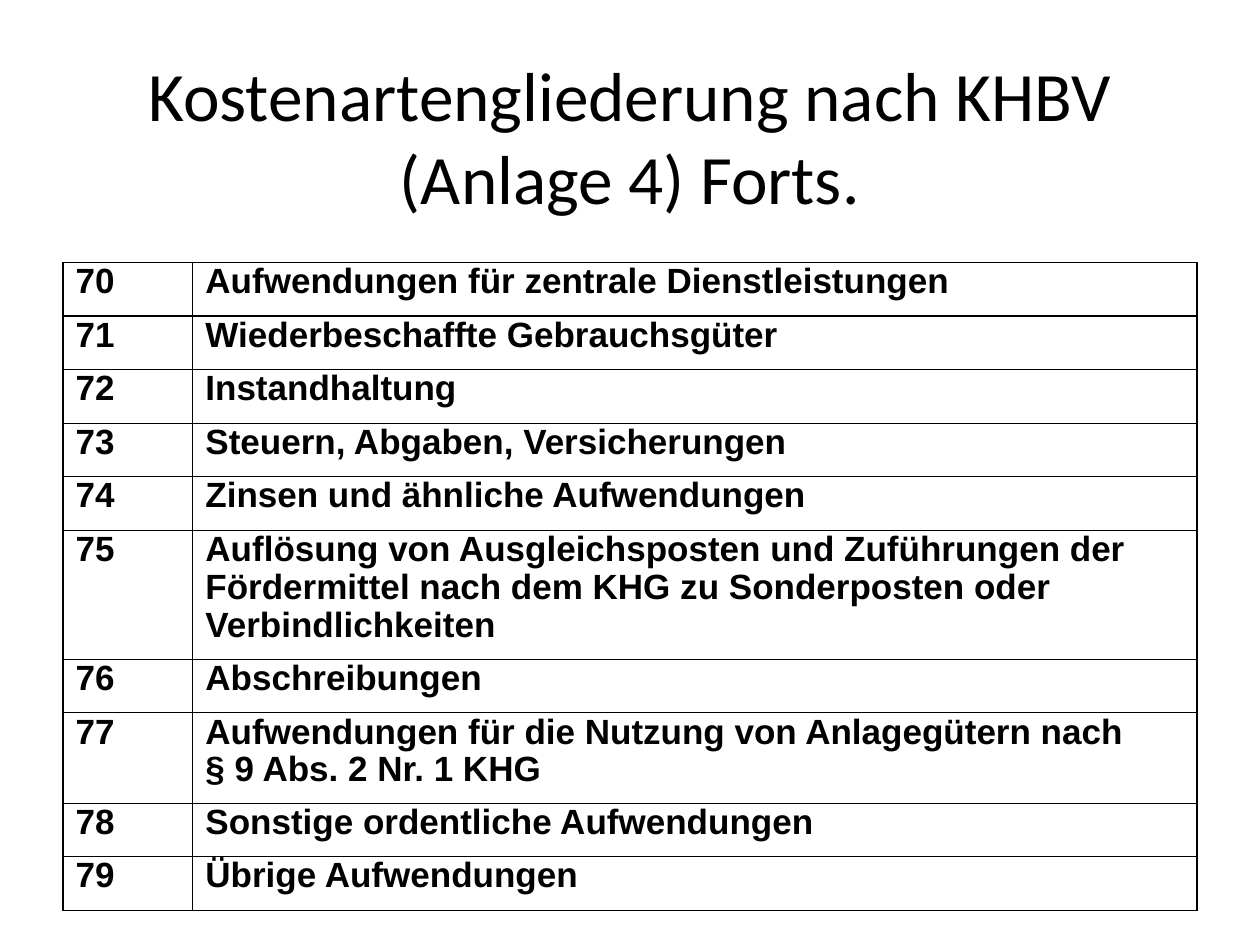
from typing import NamedTuple

import pptx
import pptx.dml.color
import pptx.enum.text
import pptx.oxml
import pptx.oxml.ns
import pptx.util
from lxml import etree

Pt = pptx.util.Pt
BLACK = pptx.dml.color.RGBColor(0, 0, 0)
LINE_HEIGHT = 22.2
ROW_HEIGHT = 30.6
CELL_PADDING = 7.2
HANGING = 48
BORDER_WIDTH = 0.75


class CostType(NamedTuple):
    number: str
    lines: tuple[str, ...]


COST_TYPES = [
    CostType("70", ("Aufwendungen für zentrale Dienstleistungen",)),
    CostType("71", ("Wiederbeschaffte Gebrauchsgüter",)),
    CostType("72", ("Instandhaltung",)),
    CostType("73", ("Steuern, Abgaben, Versicherungen",)),
    CostType("74", ("Zinsen und ähnliche Aufwendungen",)),
    CostType("75", ("Auflösung von Ausgleichsposten und Zuführungen der",
                    "Fördermittel nach dem KHG zu Sonderposten oder",
                    "Verbindlichkeiten")),
    CostType("76", ("Abschreibungen",)),
    CostType("77", ("Aufwendungen für die Nutzung von Anlagegütern nach",
                    "§ 9 Abs. 2 Nr. 1 KHG")),
    CostType("78", ("Sonstige ordentliche Aufwendungen",)),
    CostType("79", ("Übrige Aufwendungen",)),
]


def add_run(p, text: str, font: str, size: float, bold: bool = False) -> None:
    r = p.add_run()
    r.text = text
    r.font.name = font
    r.font.size = Pt(size)
    r.font.bold = bold
    r.font.color.rgb = BLACK


def add_borders(cell) -> None:
    tc_pr = cell._tc.get_or_add_tcPr()
    for i, side in enumerate(("lnL", "lnR", "lnT", "lnB")):
        ln = etree.fromstring(
            f'<a:{side} {pptx.oxml.ns.nsdecls("a")} w="{Pt(BORDER_WIDTH)}">'
            f'<a:solidFill><a:srgbClr val="{BLACK}"/></a:solidFill></a:{side}>')
        tc_pr.insert(i, ln)


def fill_cell(cell, lines: tuple[str, ...]) -> None:
    cell.fill.background()
    add_borders(cell)
    tf = cell.text_frame
    for i, line in enumerate(lines):
        p = tf.add_paragraph() if i else tf.paragraphs[0]
        p.line_spacing = 0.8
        p.space_before = Pt(3.8)
        p_pr = p._p.get_or_add_pPr()
        p_pr.set("marL", str(Pt(HANGING)))
        p_pr.set("indent", str(Pt(-HANGING)))
        add_run(p, line, "Arial", 20, bold=True)


def add_title(slide, text: str) -> None:
    title = slide.shapes.title
    title.left, title.top, title.width, title.height = Pt(36), Pt(23), Pt(648), Pt(109)
    tf = title.text_frame
    tf.word_wrap = True
    tf.auto_size = pptx.enum.text.MSO_AUTO_SIZE.NONE
    tf.vertical_anchor = pptx.enum.text.MSO_ANCHOR.MIDDLE
    p = tf.paragraphs[0]
    p.alignment = pptx.enum.text.PP_ALIGN.CENTER
    add_run(p, text, "Calibri", 39.6)


def add_cost_table(slide, cost_types: list[CostType]) -> None:
    heights = [max(ROW_HEIGHT, len(c.lines) * LINE_HEIGHT + CELL_PADDING)
               for c in cost_types]
    table = slide.shapes.add_table(len(cost_types), 2, Pt(36), Pt(150),
                                   Pt(648), Pt(sum(heights))).table
    table.first_row = False
    table.horz_banding = False
    table.columns[0].width = Pt(74.2)
    table.columns[1].width = Pt(573.8)
    for i, (cost, height) in enumerate(zip(cost_types, heights)):
        table.rows[i].height = Pt(height)
        fill_cell(table.cell(i, 0), (cost.number,))
        fill_cell(table.cell(i, 1), cost.lines)


def main() -> None:
    prs = pptx.Presentation()
    prs.slide_width, prs.slide_height = Pt(720), Pt(540)
    slide = prs.slides.add_slide(prs.slide_layouts[5])
    add_title(slide, "Kostenartengliederung nach KHBV (Anlage 4) Forts.")
    add_cost_table(slide, COST_TYPES)
    prs.save("out.pptx")


if __name__ == "__main__":
    main()
